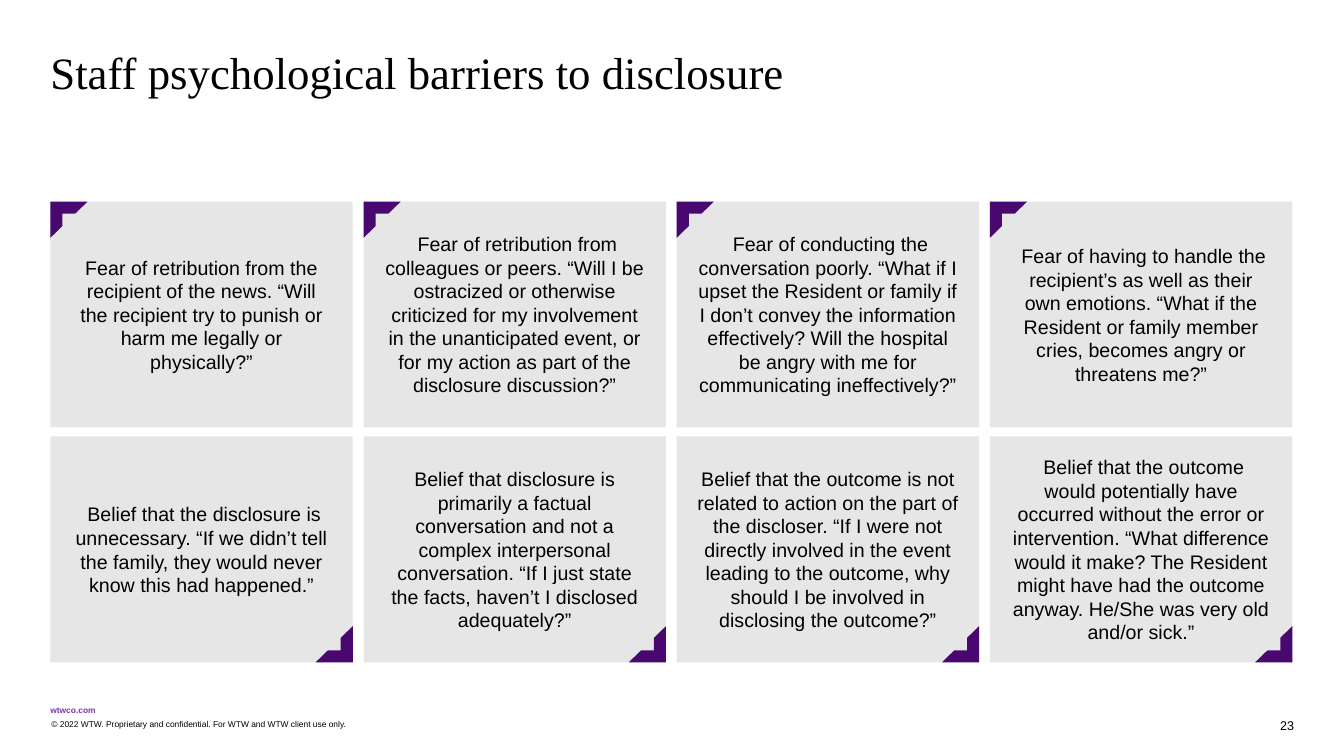
"""Build the slide on staff psychological barriers to disclosure."""
from pptx import Presentation
from pptx.dml.color import RGBColor
from pptx.enum.shapes import MSO_SHAPE
from pptx.enum.text import MSO_ANCHOR, MSO_AUTO_SIZE, PP_ALIGN
from pptx.util import Pt

LEFT, TOP = 36, 144
CARD_WIDTH, CARD_HEIGHT = 216, 161.3
COLUMN_STEP, ROW_STEP = 223.7, 167.8
CORNER_WIDTH, CORNER_HEIGHT = 26.6, 25.9

FEARS = [
    "Fear of retribution from the recipient of the news. “Will the recipient try to "
    "punish or harm me legally or physically?”",
    " Fear of retribution from colleagues or peers. “Will I be ostracized or otherwise "
    "criticized for my involvement in the unanticipated event, or for my action as "
    "part of the disclosure discussion?”",
    " Fear of conducting the conversation poorly. “What if I upset the Resident or "
    "family if I don’t convey the information effectively? Will the hospital be angry "
    "with me for communicating ineffectively?”",
    " Fear of having to handle the recipient’s as well as their own emotions. “What if "
    "the Resident or family member cries, becomes angry or threatens me?”",
]
BELIEFS = [
    " Belief that the disclosure is unnecessary. “If we didn’t tell the family, they "
    "would never know this had happened.”",
    "Belief that disclosure is primarily a factual conversation and not a complex "
    "interpersonal conversation. “If I just state the facts, haven’t I disclosed "
    "adequately?”",
    "Belief that the outcome is not related to action on the part of the discloser. "
    "“If I were not directly involved in the event leading to the outcome, why should "
    "I be involved in disclosing the outcome?”",
    " Belief that the outcome would potentially have occurred without the error or "
    "intervention. “What difference would it make? The Resident might have had the "
    "outcome anyway. He/She was very old and/or sick.”",
]


def color(value):
    """Turn a hex string into a colour."""
    return RGBColor.from_string(value)


def points(*values):
    """Turn numbers into lengths in points."""
    return [Pt(value) for value in values]


def write(shape, text, size, ink="000000", align=PP_ALIGN.LEFT, anchor=MSO_ANCHOR.TOP,
          side=0, name="Arial", bold=False, spacing=1.0):
    """Put one formatted paragraph into a shape."""
    frame = shape.text_frame
    frame_format = {
        "word_wrap": True, "auto_size": MSO_AUTO_SIZE.NONE, "vertical_anchor": anchor,
        "margin_left": Pt(side), "margin_right": Pt(side),
        "margin_top": 0, "margin_bottom": 0,
    }
    for key, value in frame_format.items():
        setattr(frame, key, value)
    para = frame.paragraphs[0]
    para.alignment, para.line_spacing = align, spacing
    span = para.add_run()
    span.text = text
    for key, value in {"name": name, "size": Pt(size), "bold": bold}.items():
        setattr(span.font, key, value)
    span.font.color.rgb = color(ink)


def add_title(page, text):
    """Move and fill the title placeholder."""
    title = page.shapes.title
    title.left, title.top, title.width, title.height = points(LEFT, 36, 885.6, 36)
    write(title, text, 32, name="Times New Roman", spacing=0.9)


def add_label(page, text, place, size, **style):
    """Add a small text box of the footer."""
    write(page.shapes.add_textbox(*points(*place)), text, size, **style)


def add_block(group, kind, place, fill):
    """Add a flat filled shape without outline."""
    block = group.shapes.add_shape(kind, *points(*place))
    block.shadow.inherit = False
    block.fill.solid()
    block.fill.fore_color.rgb = color(fill)
    block.line.fill.background()
    return block


def add_card(group, text, left, top, corner_at_end):
    """Add a grey card with a purple corner at its start or end."""
    card = add_block(group, MSO_SHAPE.RECTANGLE,
                     (left, top, CARD_WIDTH, CARD_HEIGHT), "E6E6E6")
    write(card, text, 14, align=PP_ALIGN.CENTER, anchor=MSO_ANCHOR.MIDDLE, side=14.4)
    if corner_at_end:
        left += CARD_WIDTH - CORNER_WIDTH
        top += CARD_HEIGHT - CORNER_HEIGHT
    corner = add_block(group, MSO_SHAPE.HALF_FRAME,
                       (left, top, CORNER_WIDTH, CORNER_HEIGHT), "48086F")
    corner.rotation = 180 if corner_at_end else 0


def main():
    """Build and save the slide."""
    deck = Presentation()
    deck.slide_width, deck.slide_height = points(960, 540)
    page = deck.slides.add_slide(deck.slide_layouts[5])
    add_title(page, "Staff psychological barriers to disclosure")
    for row, texts in enumerate((FEARS, BELIEFS)):
        group = page.shapes.add_group_shape()
        for column, text in enumerate(texts):
            add_card(group, text, LEFT + column * COLUMN_STEP, TOP + row * ROW_STEP,
                     corner_at_end=row == 1)
    add_label(page, "wtwco.com", (LEFT, 504, 72, 7.2), 6, ink="7F35B2", bold=True)
    add_label(page, "© 2022 WTW. Proprietary and confidential. "
              "For WTW and WTW client use only.", (36.7, 513.4, 475, 7.2), 6)
    add_label(page, "23", (900, 506.9, 24.5, 16.6), 9,
              align=PP_ALIGN.RIGHT, anchor=MSO_ANCHOR.BOTTOM)
    deck.save("out.pptx")


if __name__ == "__main__":
    main()
